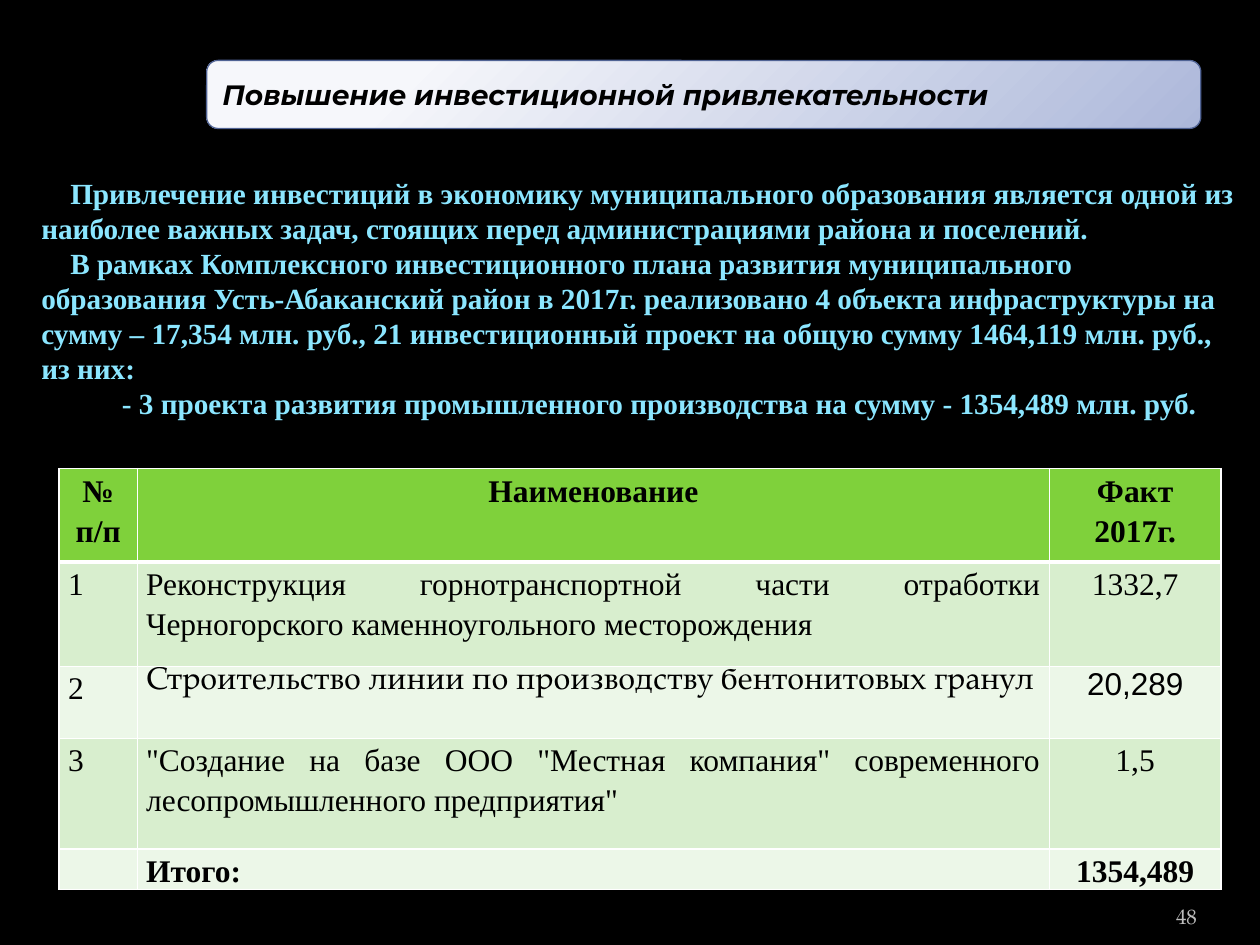
import pptx
import pptx.util
import pptx.dml.color
import pptx.enum.shapes
import pptx.enum.text
import pptx.oxml
import pptx.oxml.ns

Inches, Pt = pptx.util.Inches, pptx.util.Pt
RGB = pptx.dml.color.RGBColor.from_string
ALIGN, ANCHOR = pptx.enum.text.PP_ALIGN, pptx.enum.text.MSO_ANCHOR

THEME = {
    "background": "000000", "ink": "000000", "intro": "8BE6FF", "number": "BDBDBD",
    "header": "7FD13B", "bands": ("D8EECE", "ECF7E8"), "grid": "FFFFFF",
    "banner": ((20, "F6F7FB"), (100, "ADB8DA")), "banner_line": "506394",
    "body_font": "Times New Roman", "title_font": "Montserrat",
    "serif_font": "TeX Gyre Pagella", "sans_font": "Arial",
    "title_size": 16, "intro_size": 16.7, "table_size": 18, "number_size": 12,
}

TITLE = "Повышение инвестиционной привлекательности"
INTRO = [  # first-line indent in inches, text
    (0.23, "Привлечение инвестиций в экономику муниципального образования является "
           "одной из наиболее важных задач, стоящих перед администрациями района и поселений."),
    (0.23, "В рамках Комплексного инвестиционного плана развития муниципального образования "
           "Усть-Абаканский район в 2017г. реализовано 4 объекта инфраструктуры на сумму – "
           "17,354 млн. руб., 21 инвестиционный проект на общую сумму 1464,119 млн. руб., из них:"),
    (0.64, "- 3 проекта развития промышленного производства на сумму - 1354,489 млн. руб."),
]
ROWS = [
    ("№ п/п", "Наименование", "Факт 2017г."),
    ("1", "Реконструкция горнотранспортной части отработки Черногорского "
          "каменноугольного месторождения", "1332,7"),
    ("2", "Строительство линии по производству бентонитовых гранул", "20,289"),
    ("3", '"Создание на базе ООО "Местная компания" современного '
          'лесопромышленного предприятия"', "1,5"),
    ("", "Итого:", "1354,489"),
]
COL_WIDTHS = (0.62, 7.24, 1.36)
ROW_HEIGHTS = (0.74, 0.83, 0.57, 0.88, 0.31)
COL_ALIGN = (ALIGN.JUSTIFY, ALIGN.JUSTIFY, ALIGN.CENTER)
# Cells with their own font also keep single line spacing.
CELL_FONTS = {(2, 1): THEME["serif_font"], (2, 2): THEME["sans_font"]}
PAGE = "48"


def set_margins(tf, left, top, right, bottom):
    tf.margin_left, tf.margin_top = Inches(left), Inches(top)
    tf.margin_right, tf.margin_bottom = Inches(right), Inches(bottom)


def add_run(p, text, font, size, color, bold=False, italic=False):
    r = p.add_run()
    r.text = text
    r.font.name, r.font.size = font, Pt(size)
    r.font.bold, r.font.italic = bold, italic
    r.font.color.rgb = RGB(color)


def add_box(slide, left, top, width, height):
    box = slide.shapes.add_textbox(*map(Inches, (left, top, width, height)))
    box.text_frame.word_wrap = True
    return box.text_frame


def set_radial_fill(sp, stops):
    """Fill a shape with a circular gradient spreading from its top left corner."""
    sp.fill.gradient()
    old = sp.fill._xPr.find(pptx.oxml.ns.qn("a:gradFill"))
    marks = "".join(f'<a:gs pos="{pos * 1000}"><a:srgbClr val="{color}"/></a:gs>'
                    for pos, color in stops)
    new = pptx.oxml.parse_xml(
        f'<a:gradFill {pptx.oxml.ns.nsdecls("a")} rotWithShape="1"><a:gsLst>{marks}</a:gsLst>'
        '<a:path path="circle"><a:fillToRect l="-15000" t="-15000" r="115000" b="115000"/>'
        '</a:path></a:gradFill>')
    old.getparent().replace(old, new)


def set_borders(cell, color, widths):
    """Draw cell borders; widths maps L, R, T and B, in that order, to points."""
    tc_pr = cell._tc.get_or_add_tcPr()
    for i, (side, width) in enumerate(widths.items()):
        tc_pr.insert(i, pptx.oxml.parse_xml(
            f'<a:ln{side} {pptx.oxml.ns.nsdecls("a")} w="{Pt(width)}"><a:solidFill>'
            f'<a:srgbClr val="{color}"/></a:solidFill></a:ln{side}>'))


def add_project_table(slide):
    frame = slide.shapes.add_table(len(ROWS), len(COL_WIDTHS), Inches(0.47), Inches(3.72),
                                   Inches(sum(COL_WIDTHS)), Inches(sum(ROW_HEIGHTS)))
    table = frame.table
    for column, width in zip(table.columns, COL_WIDTHS):
        column.width = Inches(width)
    for row, height in zip(table.rows, ROW_HEIGHTS):
        row.height = Inches(height)
    for i, texts in enumerate(ROWS):
        header, total = i == 0, i == len(ROWS) - 1
        for j, text in enumerate(texts):
            cell = table.cell(i, j)
            set_margins(cell, 0.07, 0, 0.07, 0)
            cell.fill.solid()
            cell.fill.fore_color.rgb = RGB(THEME["header"] if header
                                           else THEME["bands"][(i - 1) % 2])
            set_borders(cell, THEME["grid"],
                        {"L": 1, "R": 1, "T": 3 if i == 1 else 1, "B": 3 if header else 1})
            p = cell.text_frame.paragraphs[0]
            p.alignment = ALIGN.CENTER if header else COL_ALIGN[j]
            font = CELL_FONTS.get((i, j))
            if not font:
                p.line_spacing = 1.15
            if text:
                add_run(p, text, font or THEME["body_font"], THEME["table_size"],
                        THEME["ink"], bold=header or total)
            else:
                p.font.size = Pt(THEME["table_size"])


def add_page_number(slide):
    tf = add_box(slide, 8.67, 7.02, 0.83, 0.4)
    set_margins(tf, 0, 0.05, 0, 0.05)
    tf.vertical_anchor = ANCHOR.BOTTOM
    p = tf.paragraphs[0]
    p.alignment = ALIGN.RIGHT
    add_run(p, PAGE, THEME["serif_font"], THEME["number_size"], THEME["number"])


def add_title_banner(slide):
    sp = slide.shapes.add_shape(pptx.enum.shapes.MSO_SHAPE.ROUNDED_RECTANGLE,
                                *map(Inches, (1.64, 0.48, 7.89, 0.54)))
    sp.shadow.inherit = False
    set_radial_fill(sp, THEME["banner"])
    sp.line.color.rgb = RGB(THEME["banner_line"])
    sp.line.width = Pt(0.75)
    tf = sp.text_frame
    tf.word_wrap = True
    tf.vertical_anchor = ANCHOR.MIDDLE
    p = tf.paragraphs[0]
    p.alignment = ALIGN.LEFT
    add_run(p, TITLE, THEME["title_font"], THEME["title_size"], THEME["ink"],
            bold=True, italic=True)


def add_intro(slide):
    tf = add_box(slide, 0.23, 1.34, 9.7, 2.1)
    for i, (indent, text) in enumerate(INTRO):
        p = tf.add_paragraph() if i else tf.paragraphs[0]
        p._p.get_or_add_pPr().set("indent", str(Inches(indent)))
        add_run(p, text, THEME["body_font"], THEME["intro_size"], THEME["intro"], bold=True)


def main():
    prs = pptx.Presentation()
    prs.slide_width, prs.slide_height = Inches(10), Inches(7.5)
    slide = prs.slides.add_slide(prs.slide_layouts[6])
    slide.background.fill.solid()
    slide.background.fill.fore_color.rgb = RGB(THEME["background"])
    add_project_table(slide)
    add_page_number(slide)
    add_title_banner(slide)
    add_intro(slide)
    prs.save("out.pptx")


if __name__ == "__main__":
    main()
